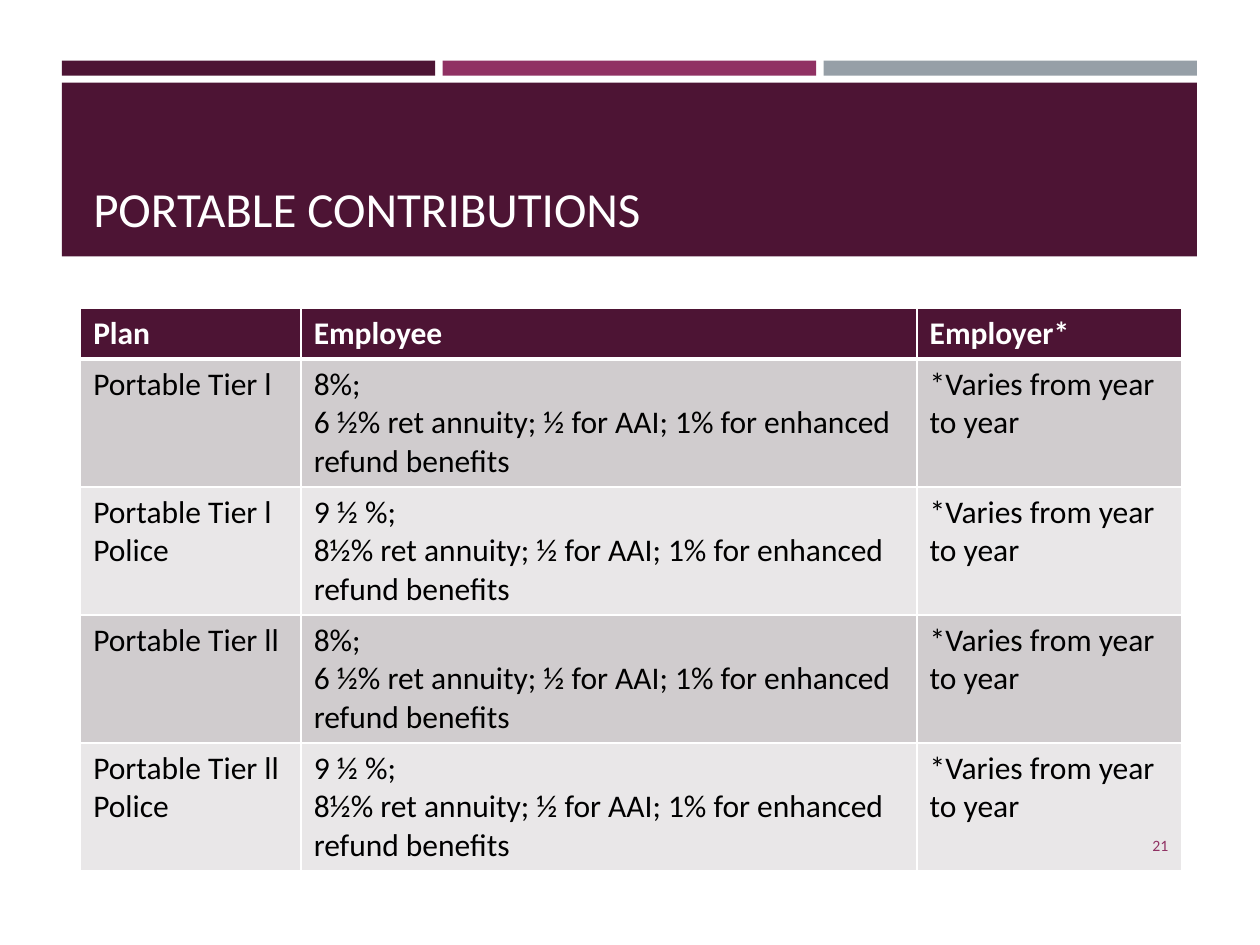
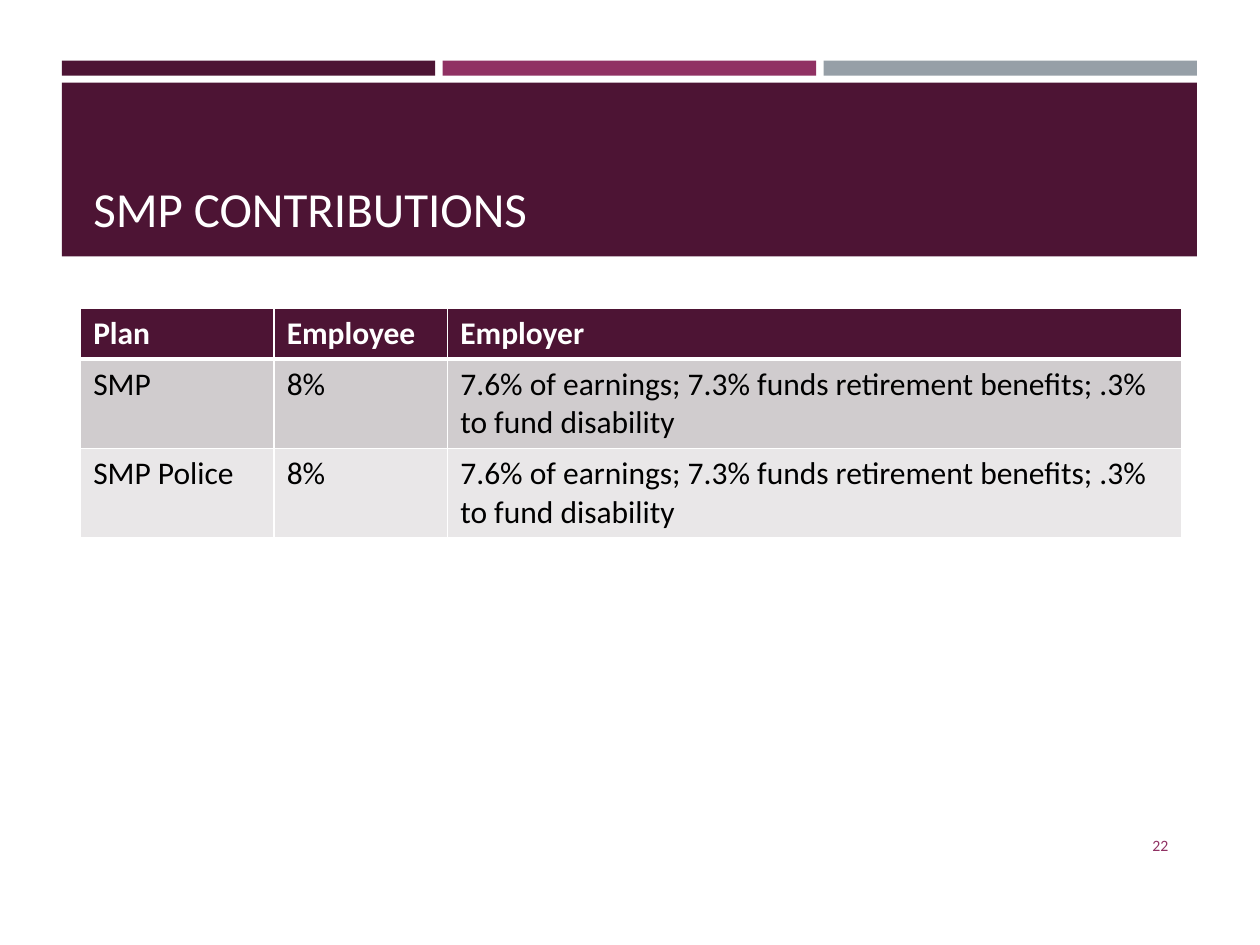
from pptx import Presentation
from pptx.dml.color import RGBColor
from pptx.enum.shapes import MSO_SHAPE
from pptx.enum.text import MSO_ANCHOR, MSO_AUTO_SIZE, PP_ALIGN
from pptx.oxml import parse_xml
from pptx.oxml.ns import nsdecls
from pptx.util import Pt

RECT = MSO_SHAPE.RECTANGLE
BOTTOM, MIDDLE = MSO_ANCHOR.BOTTOM, MSO_ANCHOR.MIDDLE
LEFT, RIGHT = PP_ALIGN.LEFT, PP_ALIGN.RIGHT
NO_AUTOFIT = MSO_AUTO_SIZE.NONE

THEME = {
    "font": "Calibri",
    "plum": "4D1434", "berry": "903163", "steel": "969FA7",
    "white": "FFFFFF", "black": "000000",
    "row_fills": ["D0CCCE", "E9E7E8"],
    "title_size": 28, "table_size": 18, "number_size": 9,
}

VARIES = "*Varies from year to year"
REGULAR = "8%;\n6 ½% ret annuity; ½ for AAI; 1% for enhanced refund benefits"
POLICE = "9 ½ %;\n8½% ret annuity; ½ for AAI; 1% for enhanced refund benefits"
SMP_EMPLOYER = ("7.6% of earnings; 7.3% funds retirement benefits; "
                ".3% to fund disability")

SLIDES = [
    {"title": "PORTABLE CONTRIBUTIONS", "number": "21",
     "widths": [126, 352, 151.2], "row_height": 73.1,
     "rows": [["Plan", "Employee", "Employer*"],
              ["Portable Tier l", REGULAR, VARIES],
              ["Portable Tier l Police", POLICE, VARIES],
              ["Portable Tier ll", REGULAR, VARIES],
              ["Portable Tier ll Police", POLICE, VARIES]]},
    {"title": "SMP CONTRIBUTIONS", "number": "22",
     "widths": [110.6, 99.2, 419.4], "row_height": 51.1,
     "rows": [["Plan", "Employee", "Employer"],
              ["SMP", "8%", SMP_EMPLOYER],
              ["SMP Police", "8%", SMP_EMPLOYER]]},
]

MARGIN, BAND_WIDTH, BAND_GAP = 35.3, 648.7, 4.3
CONTENT_LEFT, CONTENT_WIDTH = 46.1, 629.2
TABLE_TOP, HEADER_HEIGHT = 175.9, 29.2


def write(tf, text, size, color, bold=False, align=LEFT):
    tf.text = text
    for p in tf.paragraphs:
        p.alignment = align
        font = p.runs[0].font
        for name, value in {"name": THEME["font"], "size": Pt(size), "bold": bold}.items():
            setattr(font, name, value)
        font.color.rgb = RGBColor.from_string(color)


def set_borders(cell, widths):
    """Draw white cell borders, widths in points by side letter (L, R, T, B)."""
    tc_pr = cell._tc.get_or_add_tcPr()
    for i, (side, width) in enumerate(widths.items()):
        tc_pr.insert(i, parse_xml(
            f'<a:ln{side} {nsdecls("a")} w="{Pt(width)}"><a:solidFill>'
            f'<a:srgbClr val="{THEME["white"]}"/></a:solidFill></a:ln{side}>'))


prs = Presentation()
prs.slide_width, prs.slide_height = Pt(720), Pt(540)
layout = prs.slide_layouts[5]

stripe_width = (BAND_WIDTH - 2 * BAND_GAP) / 3
bands = [(MARGIN + i * (stripe_width + BAND_GAP), 34.7, stripe_width, 8.5, THEME[color])
         for i, color in enumerate(["plum", "berry", "steel"])]
bands.append((MARGIN, 47.3, BAND_WIDTH, 99.2, THEME["plum"]))

for index, content in enumerate(SLIDES):
    s = prs.slides.add_slide(layout)

    # The bands are moved to the layout once, so that every slide shows them
    if index == 0:
        for i, (*box, color) in enumerate(bands):
            sp = s.shapes.add_shape(RECT, *map(Pt, box))
            sp.shadow.inherit = False
            sp.fill.solid()
            sp.fill.fore_color.rgb = RGBColor.from_string(color)
            sp.line.fill.background()
            sp.element.nvSpPr.cNvPr.id = 20 + i
            layout.shapes.element.insert(2 + i, sp.element)

    title = s.shapes.title
    title.left, title.top, title.width, title.height = map(
        Pt, (CONTENT_LEFT, 54, CONTENT_WIDTH, 85))
    tf = title.text_frame
    for name, value in {"vertical_anchor": BOTTOM, "word_wrap": True,
                        "auto_size": NO_AUTOFIT}.items():
        setattr(tf, name, value)
    write(tf, content["title"], THEME["title_size"], THEME["white"])

    rows, widths = content["rows"], content["widths"]
    table_height = HEADER_HEIGHT + content["row_height"] * (len(rows) - 1)
    table = s.shapes.add_table(len(rows), len(widths), *map(
        Pt, (CONTENT_LEFT, TABLE_TOP, CONTENT_WIDTH, table_height))).table
    for column, width in zip(table.columns, widths):
        column.width = Pt(width)
    for r, row in enumerate(rows):
        header = r == 0
        table.rows[r].height = Pt(HEADER_HEIGHT if header else content["row_height"])
        fill = THEME["plum"] if header else THEME["row_fills"][(r - 1) % 2]
        for c, text in enumerate(row):
            cell = table.cell(r, c)
            cell.fill.solid()
            cell.fill.fore_color.rgb = RGBColor.from_string(fill)
            write(cell.text_frame, text, THEME["table_size"],
                  THEME["white" if header else "black"], bold=header)
            set_borders(cell, {"L": 1, "R": 1, "T": 3 if r == 1 else 1,
                               "B": 3 if header else 1})

    number = s.shapes.add_textbox(*map(Pt, (614.2, 468.7, 60.5, 28.8)))
    tf = number.text_frame
    tf.word_wrap, tf.vertical_anchor = True, MIDDLE
    write(tf, content["number"], THEME["number_size"], THEME["berry"], align=RIGHT)

prs.save("out.pptx")
